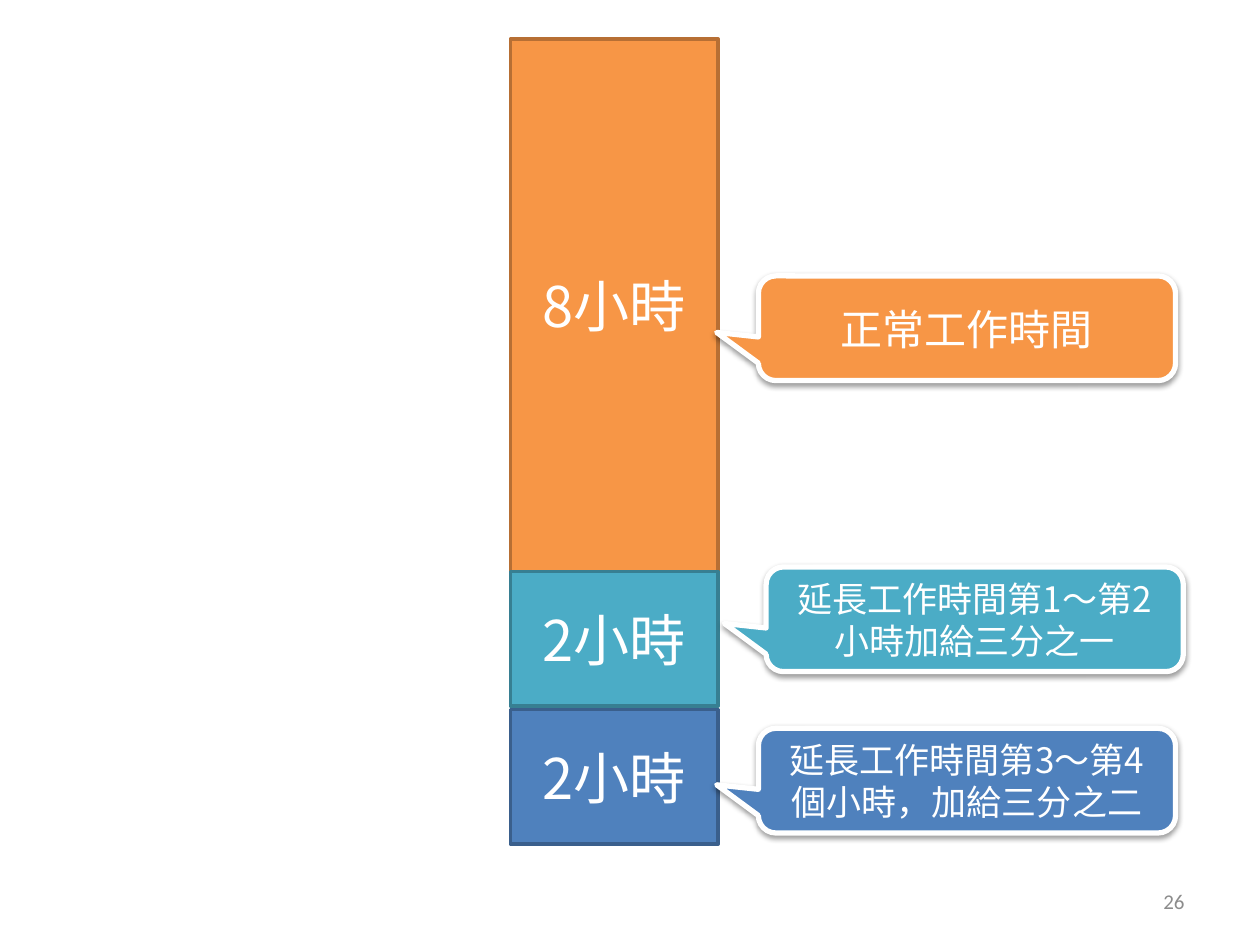
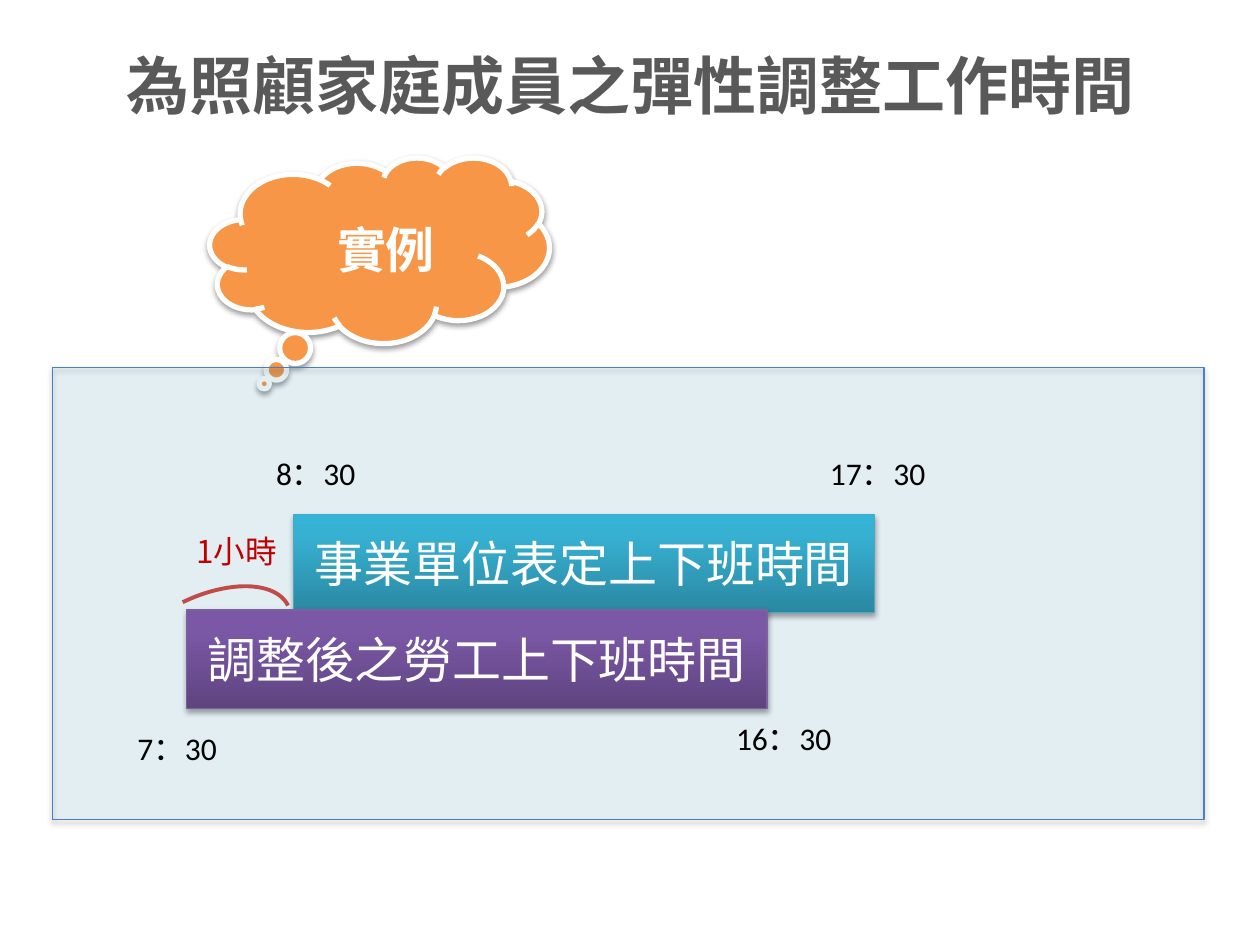
from copy import deepcopy

from lxml import etree
from pptx import Presentation
from pptx.dml.color import RGBColor
from pptx.enum.shapes import MSO_SHAPE
from pptx.enum.text import MSO_ANCHOR, PP_ALIGN
from pptx.oxml.ns import qn
from pptx.util import Pt

RECT = MSO_SHAPE.RECTANGLE
CALLOUT = MSO_SHAPE.ROUNDED_RECTANGULAR_CALLOUT
CLOUD = MSO_SHAPE.CLOUD_CALLOUT
ARC = MSO_SHAPE.ARC
CENTER, RIGHT = PP_ALIGN.CENTER, PP_ALIGN.RIGHT
MIDDLE = MSO_ANCHOR.MIDDLE

CJK, LATIN, CALLOUT_FONT = "Noto Sans CJK SC", "Calibri", "Arial"
C = {
    "white": "FFFFFF", "black": "000000", "title": "595959", "number": "8C8C8C",
    "orange": "F79646", "orange_line": "B76F34",
    "teal": "4BACC6", "teal_line": "377F92",
    "blue": "4F81BD", "blue_line": "3A5F8C",
    "panel": "49B8DB", "panel_line": "4B7EBC",
    "scheduled_line": "46AAC5", "adjusted_line": "7D60A0",
    "red": "C00000", "arc": "BF4C48",
}

# Content: lengths in points
PAGE_NUMBER = "26"
BAR_LEFT, BAR_WIDTH = 291.6, 118.8
CALLOUT_SIZE = (238.4, 59.8)
# bar text, top, height, colour, callout text, callout left, callout top, font, size
WORK_HOURS = [
    ("8小時", 22.3, 304.2, "orange", "正常工作時間", 433.4, 157.7, CALLOUT_FONT, 24),
    ("2小時", 326.5, 77, "teal", "延長工作時間第1～第2小時加給三分之一",
     437.8, 324, CJK, 20),
    ("2小時", 405.4, 77, "blue", "延長工作時間第3～第4個小時，加給三分之二",
     433.4, 416.2, CJK, 20),
]

TITLE = "為照顧家庭成員之彈性調整工作時間"
EXAMPLE = "實例"
SHIFT_SIZE = (332, 56.2)
# text, left, top, line colour, gradient stops from bottom to top
SHIFTS = [
    ("事業單位表定上下班時間", 167.6, 293.8, "scheduled_line",
     [(0, "2A88A2"), (0.8, "37B1D2"), (1, "34B4D6")]),
    ("調整後之勞工上下班時間", 106.4, 348.5, "adjusted_line",
     [(0, "5F4480"), (0.8, "7B58A6"), (1, "7C57A8")]),
]
LABEL_HEIGHT = 33.8
# text, left, top, width, font, colour
LABELS = [
    ("8：30", 135.4, 253.4, 90, LATIN, "black"),
    ("17：30", 450, 253.4, 103, LATIN, "black"),
    ("7：30", 56.2, 410.4, 90, LATIN, "black"),
    ("16：30", 399.6, 404.6, 96.5, LATIN, "black"),
    ("1小時", 90, 298, 90, CJK, "red"),
]


def rgb(name):
    return RGBColor.from_string(C.get(name, name))


def write(tf, text, size, font=CJK, color="white", bold=False, align=CENTER):
    tf.word_wrap = True
    tf.vertical_anchor = MIDDLE
    p = tf.paragraphs[0]
    p.text = text
    p.alignment = align
    f = p.font
    f.size, f.name, f.bold = Pt(size), font, bold
    f.color.rgb = rgb(color)
    if font == CJK:
        def_rpr = p._p.pPr.find(qn("a:defRPr"))
        etree.SubElement(def_rpr, qn("a:ea"), typeface=font)
    return p


def add_shape(s, kind, at, line, width, fill=None):
    sp = s.shapes.add_shape(kind, *map(Pt, at))
    sp.shadow.inherit = False
    sp.line.color.rgb = rgb(line)
    sp.line.width = Pt(width)
    if fill:
        sp.fill.solid()
        sp.fill.fore_color.rgb = rgb(fill)
    else:
        sp.fill.background()
    return sp


def add_alpha(color, percent):
    etree.SubElement(color, qn("a:alpha"), val=str(percent * 1000))


def add_shadow(sp, opacity=38, distance=1.6):
    effects = sp._element.spPr.find(qn("a:effectLst"))
    shadow = etree.SubElement(
        effects, qn("a:outerShdw"), blurRad=str(Pt(3.1)), dist=str(Pt(distance)),
        dir="5400000", rotWithShape="0")
    add_alpha(etree.SubElement(shadow, qn("a:srgbClr"), val=C["black"]), opacity)


def set_gradient(sp, stops):
    sp.fill.gradient()
    sp.fill.gradient_angle = 90
    stop_list = sp._element.spPr.find(".//" + qn("a:gsLst"))
    stop_list.append(deepcopy(stop_list[-1]))
    for stop, (position, color) in zip(sp.fill.gradient_stops, stops):
        stop.position = position
        stop.color.rgb = rgb(color)


def add_label(s, at, text, size, **style):
    write(s.shapes.add_textbox(*map(Pt, at)).text_frame, text, size, **style)


def build_hours(prs):
    s = prs.slides.add_slide(prs.slide_layouts[6])
    add_label(s, (516.2, 500.4, 167.8, 28.8), PAGE_NUMBER, 12,
              font=LATIN, color="number", align=RIGHT)
    # Stacked working hours
    for hours, top, height, color, *_ in WORK_HOURS:
        bar = add_shape(s, RECT, (BAR_LEFT, top, BAR_WIDTH, height),
                        color + "_line", 2, color)
        write(bar.text_frame, hours, 32)
    # Explanations pointing at the bars
    for _, _, _, color, note, left, top, font, size in WORK_HOURS:
        sp = add_shape(s, CALLOUT, (left, top, *CALLOUT_SIZE), "white", 3, color)
        sp.adjustments[0], sp.adjustments[1] = -0.6, 0.04
        add_shadow(sp)
        write(sp.text_frame, note, size, font)


def build_example(prs):
    s = prs.slides.add_slide(prs.slide_layouts[5])
    title = s.shapes.title
    title.left, title.top, title.width, title.height = map(Pt, (36, 18, 648, 60))
    write(title.text_frame, TITLE, 36, color="title", bold=True)

    # Thought cloud
    cloud = add_shape(s, CLOUD, (120, 90, 194, 106), "white", 3, "orange")
    cloud.adjustments[0], cloud.adjustments[1] = -0.34, 0.72
    add_shadow(cloud)
    p = write(cloud.text_frame, EXAMPLE, 28, bold=True)
    p.line_spacing = 1.1
    p._p.pPr.set("marL", str(Pt(21)))

    # Translucent panel
    panel = add_shape(s, RECT, (30, 210, 658, 258.5), "panel_line", 0.75, "panel")
    add_alpha(panel._element.spPr.find(qn("a:solidFill"))[0], 10)
    add_shadow(panel)

    # Shifts and their times
    for text, left, top, line, stops in SHIFTS:
        shift = add_shape(s, RECT, (left, top, *SHIFT_SIZE), line, 0.75)
        set_gradient(shift, stops)
        add_shadow(shift, 35, 1.8)
        write(shift.text_frame, text, 28)
    for text, left, top, width, font, color in LABELS:
        add_label(s, (left, top, width, LABEL_HEIGHT), text, 18, font=font, color=color)

    # One-hour difference
    arc = add_shape(s, ARC, (63.4, 341.3, 106.6, 56.2), "arc", 2.25)
    arc.rotation = 334


def main():
    prs = Presentation()
    prs.slide_width, prs.slide_height = Pt(720), Pt(540)
    build_hours(prs)
    build_example(prs)
    prs.save("out.pptx")


if __name__ == "__main__":
    main()
